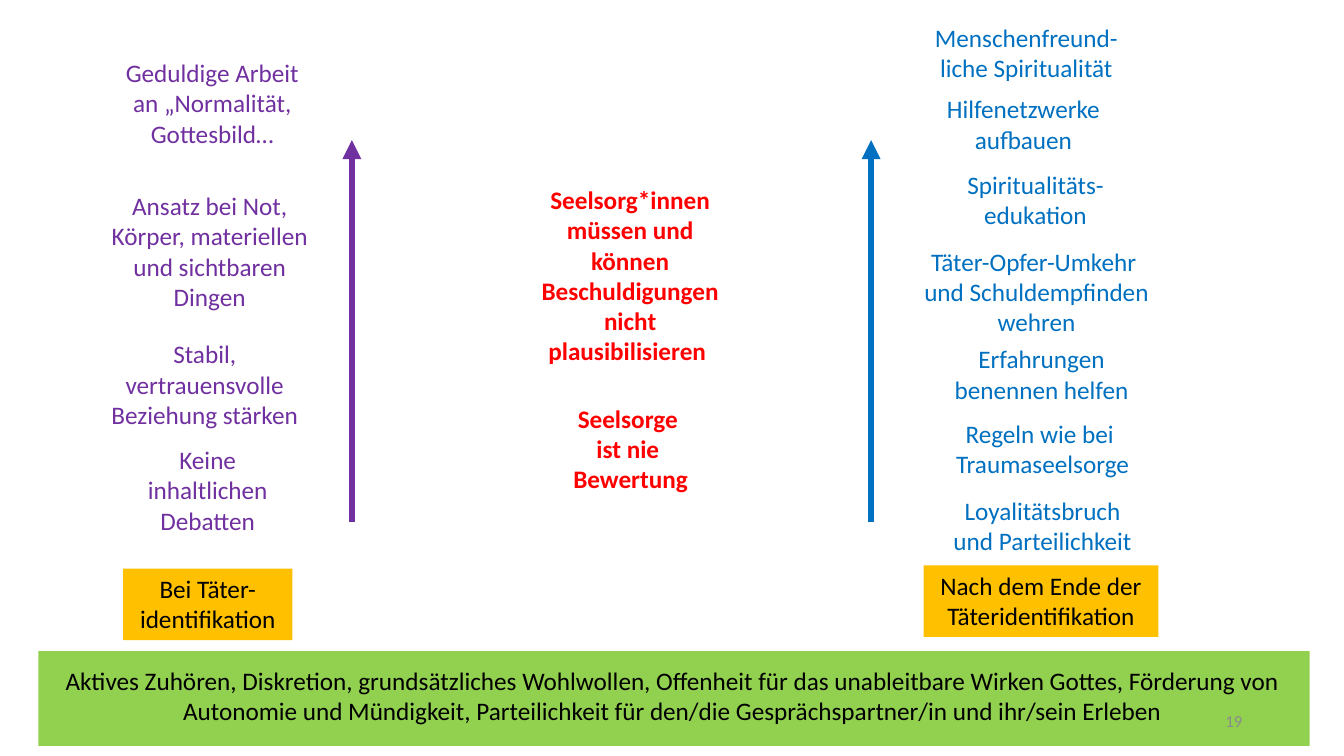
"""Builds the slide on pastoral care during and after identification with the perpetrator."""
from lxml import etree
from pptx import Presentation
from pptx.dml.color import RGBColor
from pptx.enum.dml import MSO_LINE
from pptx.enum.shapes import MSO_CONNECTOR, MSO_SHAPE
from pptx.enum.text import MSO_ANCHOR, PP_ALIGN
from pptx.oxml.ns import qn
from pptx.util import Inches, Pt

CENTER, RIGHT = PP_ALIGN.CENTER, PP_ALIGN.RIGHT
TOP, MIDDLE = MSO_ANCHOR.TOP, MSO_ANCHOR.MIDDLE
RECTANGLE, STRAIGHT, SOLID = MSO_SHAPE.RECTANGLE, MSO_CONNECTOR.STRAIGHT, MSO_LINE.SOLID

PURPLE, BLUE, RED, BLACK, GREY = "7030A0", "0070C0", "FF0000", "000000", "8C8C8C"
GREEN, AMBER = "92D050", "FFC000"
LINE_HEIGHT, PADDING = 0.3, 0.11

# left, top, width, number of lines, text
DURING_STEPS = [
    (1.01, 0.52, 2.19, 3, "Geduldige Arbeit an „Normalität, Gottesbild…"),
    (0.94, 1.84, 2.28, 4, "Ansatz bei Not, Körper, materiellen und sichtbaren Dingen"),
    (0.82, 3.31, 2.42, 3, "Stabil, vertrauensvolle Beziehung stärken"),
    (1.22, 4.36, 1.68, 3, "Keine inhaltlichen Debatten"),
]
AFTER_STEPS = [
    (9.16, 0.17, 2.04, 2, "Menschenfreund-liche Spiritualität"),
    (9.16, 0.88, 1.98, 2, "Hilfenetzwerke aufbauen"),
    (9.28, 1.63, 1.98, 2, "Spiritualitäts-edukation"),
    (9.02, 2.39, 2.52, 3, "Täter-Opfer-Umkehr \vund Schuldempfinden\nwehren"),
    (9.34, 3.36, 1.98, 2, "Erfahrungen benennen helfen"),
    (9.35, 4.10, 1.98, 2, "Regeln wie bei \nTraumaseelsorge"),
    (9.35, 4.86, 1.98, 2, "Loyalitätsbruch\vund Parteilichkeit"),
]
PRINCIPLES = [
    (5.11, 1.78, 2.28, 6,
     "Seelsorg*innen müssen und können Beschuldigungen\nnicht plausibilisieren "),
    (5.55, 3.95, 1.41, 3, "Seelsorge \nist nie \nBewertung"),
]
PHASES = [
    (1.22, 5.64, 1.68, 2, "Bei Täter-\videntifikation"),
    (9.16, 5.61, 2.33, 2, "Nach dem Ende der Täteridentifikation"),
]
FOUNDATION = (0.46, 6.55, 12.42, 2,
              "Aktives Zuhören, Diskretion, grundsätzliches Wohlwollen, Offenheit für das "
              "unableitbare Wirken Gottes, Förderung von Autonomie und Mündigkeit, "
              "Parteilichkeit für den/die Gesprächspartner/in und ihr/sein Erleben")
FOUNDATION_BAND = (0.38, 6.46, 12.61, 0.94)
PAGE_NUMBER = (9.42, 6.95, 3, 1, "19")
ARROWS = [(3.49, PURPLE), (8.64, BLUE)]
ARROW_BOTTOM, ARROW_TOP = 5.18, 1.39


def rgb(value):
    return RGBColor.from_string(value)


def add_label(slide, label, color, fill=None, bold=False, size=18, align=CENTER, anchor=TOP):
    left, top, width, lines, text = label
    height = lines * LINE_HEIGHT + PADDING
    box = slide.shapes.add_textbox(Inches(left), Inches(top), Inches(width), Inches(height))
    if fill:
        box.fill.solid()
        box.fill.fore_color.rgb = rgb(fill)
    frame = box.text_frame
    frame.word_wrap = True
    frame.vertical_anchor = anchor
    frame.text = text
    for paragraph in frame.paragraphs:
        paragraph.alignment = align
        for run in paragraph.runs:
            run.font.name = "Calibri"
            run.font.size = Pt(size)
            run.font.bold = bold
            run.font.color.rgb = rgb(color)


def add_band(slide, area, color):
    band = slide.shapes.add_shape(RECTANGLE, *map(Inches, area))
    band.shadow.inherit = False
    band.fill.solid()
    band.fill.fore_color.rgb = rgb(color)
    band.line.fill.background()


def add_arrow(slide, x, color):
    arrow = slide.shapes.add_connector(
        STRAIGHT, Inches(x), Inches(ARROW_BOTTOM), Inches(x), Inches(ARROW_TOP))
    arrow.line.color.rgb = rgb(color)
    arrow.line.width = Pt(4.5)
    arrow.line.dash_style = SOLID
    properties = arrow.element.spPr
    etree.SubElement(properties.find(qn("a:ln")), qn("a:tailEnd"), type="triangle")
    etree.SubElement(properties, qn("a:effectLst"))


def main():
    deck = Presentation()
    deck.slide_width, deck.slide_height = Inches(13.33), Inches(7.5)
    slide = deck.slides.add_slide(deck.slide_layouts.get_by_name("Blank"))

    add_band(slide, FOUNDATION_BAND, GREEN)
    add_label(slide, FOUNDATION, BLACK)
    for principle in PRINCIPLES:
        add_label(slide, principle, RED, bold=True)
    for phase in PHASES:
        add_label(slide, phase, BLACK, fill=AMBER)
    for steps, color in ((DURING_STEPS, PURPLE), (AFTER_STEPS, BLUE)):
        for step in steps:
            add_label(slide, step, color)
    for x, color in ARROWS:
        add_arrow(slide, x, color)
    add_label(slide, PAGE_NUMBER, GREY, size=12, align=RIGHT, anchor=MIDDLE)

    deck.save("out.pptx")


if __name__ == "__main__":
    main()
